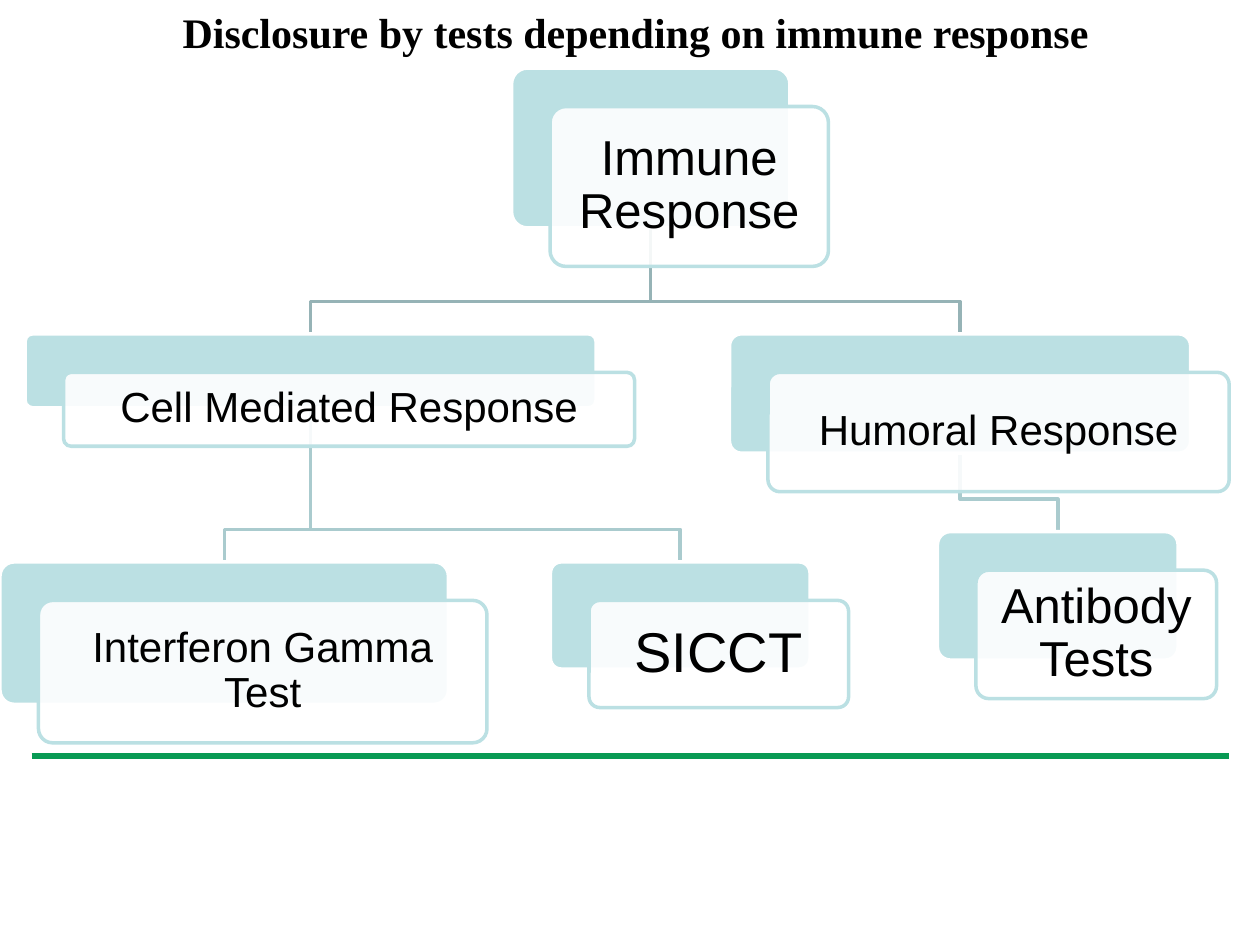
from lxml import etree
from pptx import Presentation
from pptx.dml.color import RGBColor
from pptx.enum import shapes, text
from pptx.oxml.ns import qn
from pptx.util import Pt

TEAL = RGBColor(0xBB, 0xE0, 0xE3)
DARK = RGBColor(0x96, 0xB3, 0xB6)
MID = RGBColor(0xAA, 0xCB, 0xCE)
GREEN = RGBColor(0x08, 0x9A, 0x54)
WHITE = RGBColor(0xFF, 0xFF, 0xFF)
BLACK = RGBColor(0, 0, 0)

SHIFT = 22      # offset of each front card from its back card
DROP = 18.5     # height of the last stretch of each branch

# name: left, top, width, height of the back card, text size
NODES = {
    "Immune Response": (292.3, 38.9, 159.1, 91.4, 28),
    "Cell Mediated Response": (14.4, 190.8, 326.2, 42.2, 24),
    "Interferon Gamma Test": (0, 321.1, 256.3, 81.4, 24),
    "SICCT": (314.6, 321.1, 148.3, 61.2, 32),
    "Humoral Response": (416.9, 190.8, 263.5, 68.2, 24),
    "Antibody Tests": (535.7, 303.8, 137.5, 73.4, 28),
}
LINKS = [
    ("Humoral Response", "Antibody Tests", MID),
    ("Immune Response", "Humoral Response", DARK),
    ("Cell Mediated Response", "SICCT", MID),
    ("Cell Mediated Response", "Interferon Gamma Test", MID),
    ("Immune Response", "Cell Mediated Response", DARK),
]

deck = Presentation()
deck.slide_width, deck.slide_height = Pt(720), Pt(540)
slide = deck.slides.add_slide(deck.slide_layouts[5])


def write(frame, words, font, size, bold=False):
    para = frame.paragraphs[0]
    para.alignment = text.PP_ALIGN.CENTER
    run = para.add_run()
    run.text = words
    run.font.name, run.font.size, run.font.bold = font, Pt(size), bold
    run.font.color.rgb = BLACK
    return para


def card(left, top, wide, high, fill, edge):
    box = slide.shapes.add_shape(shapes.MSO_SHAPE.ROUNDED_RECTANGLE,
                                 Pt(left), Pt(top), Pt(wide), Pt(high))
    box.adjustments[0] = 0.1
    box.shadow.inherit = False
    box.fill.solid()
    box.fill.fore_color.rgb = fill
    box.line.color.rgb = edge
    box.line.width = Pt(2)
    return box


# Title
title = slide.shapes.title
title.left, title.top, title.width, title.height = Pt(14.4), Pt(0), Pt(697.7), Pt(36)
frame = title.text_frame
frame.word_wrap = True
frame.vertical_anchor = text.MSO_ANCHOR.TOP
frame.auto_size = text.MSO_AUTO_SIZE.SHAPE_TO_FIT_TEXT
write(frame, "Disclosure by tests depending on immune response",
      "Times New Roman", 24, True)

# Rule below the tree
rule = slide.shapes.add_connector(shapes.MSO_CONNECTOR.STRAIGHT,
                                  Pt(18), Pt(432), Pt(702), Pt(432))
rule.line.color.rgb = GREEN
rule.line.width = Pt(3)
etree.SubElement(rule._element.spPr, qn("a:effectLst"))

# Branches, behind the cards
for upper, lower, color in LINKS:
    left, top, wide, high, _ = NODES[upper]
    start, base = left + wide / 2, top + high
    left, top, wide, _, _ = NODES[lower]
    end, bend = left + wide / 2, top - DROP
    pen = slide.shapes.build_freeform(Pt(start), Pt(base))
    pen.add_line_segments([(Pt(start), Pt(bend)), (Pt(end), Pt(bend)),
                           (Pt(end), Pt(top))], close=False)
    branch = pen.convert_to_shape()
    branch.shadow.inherit = False
    branch.fill.background()
    branch.line.color.rgb = color
    branch.line.width = Pt(2)

# Cards
for name, (left, top, wide, high, size) in NODES.items():
    card(left, top, wide, high, TEAL, WHITE)
    front = card(left + SHIFT, top + SHIFT, wide, high, WHITE, TEAL)
    tint = front.fill._xPr.find(qn("a:solidFill"))[0]
    etree.SubElement(tint, qn("a:alpha"), val="90000")
    frame = front.text_frame
    frame.word_wrap = True
    frame.vertical_anchor = text.MSO_ANCHOR.MIDDLE
    inset = Pt(0.3 * size)
    frame.margin_left = frame.margin_right = inset
    frame.margin_top = frame.margin_bottom = inset
    write(frame, name, "Arial", size).line_spacing = 0.9

deck.save("out.pptx")
